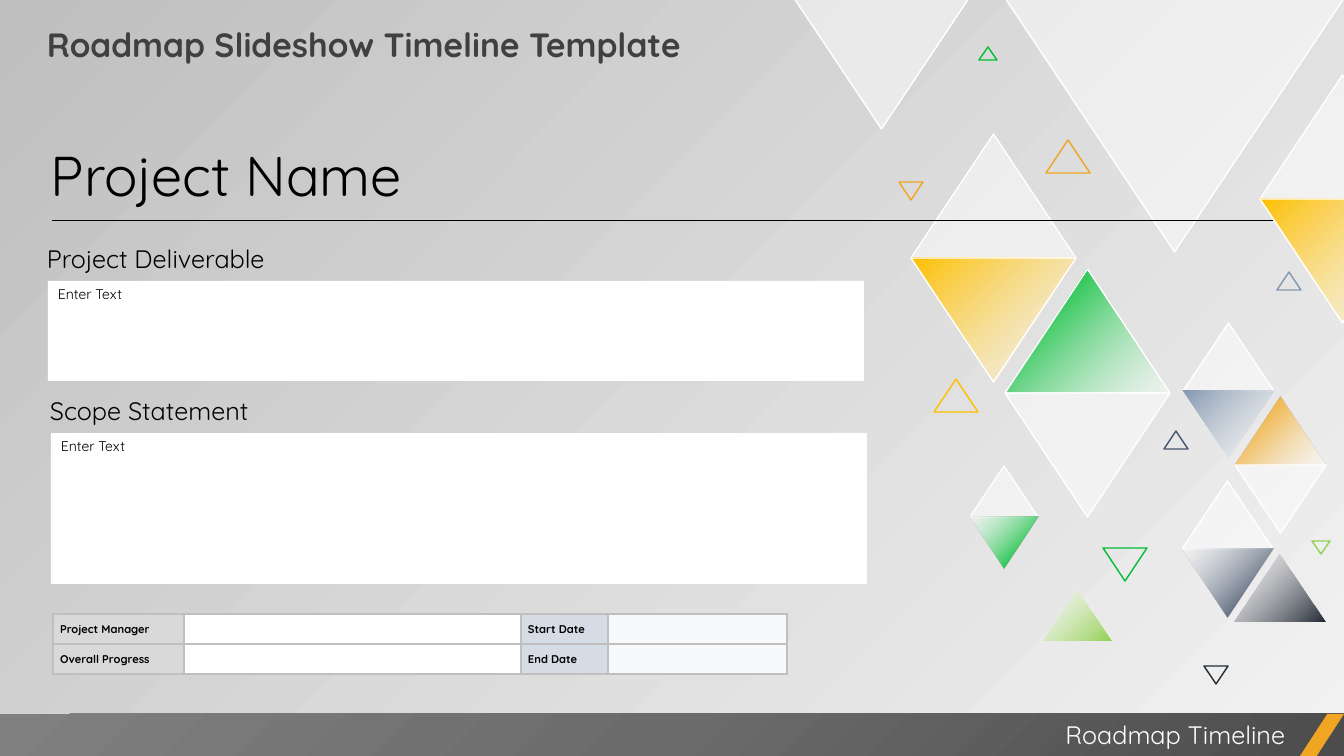
from lxml import etree
from pptx import Presentation
from pptx.dml.color import RGBColor
from pptx.enum.shapes import MSO_CONNECTOR, MSO_SHAPE
from pptx.enum.text import MSO_ANCHOR, MSO_AUTO_SIZE, PP_ALIGN
from pptx.oxml.ns import qn
from pptx.util import Emu, Pt

TRIANGLE = MSO_SHAPE.ISOSCELES_TRIANGLE
RECTANGLE = MSO_SHAPE.RECTANGLE
PARALLELOGRAM = MSO_SHAPE.PARALLELOGRAM
STRAIGHT = MSO_CONNECTOR.STRAIGHT
LEFT, RIGHT = PP_ALIGN.LEFT, PP_ALIGN.RIGHT
TOP, MIDDLE = MSO_ANCHOR.TOP, MSO_ANCHOR.MIDDLE
GROW = MSO_AUTO_SIZE.SHAPE_TO_FIT_TEXT

COLORS = {
    "white": "FFFFFF", "black": "000000", "title": "404040", "yellow": "FFC000",
    "green": "00BD32", "orange": "F0A622", "lime": "92D050", "steel": "8497B0",
    "slate": "44546A", "ink": "222A35", "mist": "F2F2F2", "silver": "BFBFBF",
    "label": "D9D9D9", "date label": "D6DCE5", "date": "F7F9FB",
    "footer dark": "4C4C4C", "footer mid": "6B6B6B", "footer light": "808080",
}
GLASS = [(0, "white", 50)]
BACKDROP = [(0, "mist", 40), (100, "silver", 100)]
FOOTER = [(0, "footer dark", 100), (50, "footer mid", 100), (100, "footer light", 100)]

LARGE, MEDIUM, SMALL = (165, 124), (91, 68), (68, 51)
MARKER_BIG, MARKER_MID, MARKER_TINY = (44, 33), (24, 18), (18, 13)


def fade_out(color):
    return [(0, color, 100), (100, "white", 50)]


def fade_in(color):
    return [(0, "white", 50), (82, color, 100)]


DIAMONDS = [
    (911, 134, LARGE, GLASS, fade_out("yellow")),
    (1005, 269, LARGE, fade_in("green"), GLASS),
    (1182, 481, MEDIUM, GLASS, fade_in("slate")),
    (1183, 323, MEDIUM, GLASS, fade_out("steel")),
    (1235, 397, MEDIUM, fade_in("orange"), GLASS),
    (970, 466, SMALL, GLASS, fade_in("green")),
    (1260, 75, LARGE, GLASS, fade_out("yellow")),
]
SINGLES = [
    (1005, -2, (339, 254), True, GLASS, "white"),
    (794, -2, (175, 131), True, GLASS, "white"),
    (1234, 554, MEDIUM, False, fade_out("ink"), None),
    (1043, 590, SMALL, False, fade_out("lime"), None),
]
MARKERS = [
    (1103, 548, MARKER_BIG, True, "green"),
    (934, 379, MARKER_BIG, False, "yellow"),
    (1046, 140, MARKER_BIG, False, "orange"),
    (1164, 431, MARKER_MID, False, "slate"),
    (1204, 666, MARKER_MID, True, "ink"),
    (899, 182, MARKER_MID, True, "orange"),
    (1277, 272, MARKER_MID, False, "steel"),
    (979, 47, MARKER_TINY, False, "green"),
    (1312, 541, MARKER_TINY, True, "lime"),
]
FACTS = [
    ["Project Manager", "", "Start Date", ""],
    ["Overall Progress", "", "End Date", ""],
]
FACT_WIDTHS = [131, 337, 87, 179]
FACT_FILLS = ["label", "white", "date label", "date"]
SECTIONS = [
    ("Project Deliverable", 37, 238, 48, 281, 100),
    ("Scope Statement", 40, 390, 51, 433, 151),
]


class Deck:
    font = {"name": "Quicksand", "bold": False}

    def __init__(self, width, height):
        self.presentation = Presentation()
        self.presentation.slide_width = self.px(width)
        self.presentation.slide_height = self.px(height)
        self.slide = self.presentation.slides.add_slide(self.presentation.slide_layouts[6])

    def px(self, length):
        return Emu(round(length * 914400 / 100.8))

    def box(self, *lengths):
        return [self.px(length) for length in lengths]

    def rgb(self, color):
        return RGBColor.from_string(COLORS[color])

    def add_color(self, parent, color, opacity):
        tint = etree.SubElement(parent, qn("a:srgbClr"), val=COLORS[color])
        if opacity < 100:
            etree.SubElement(tint, qn("a:alpha"), val=str(opacity * 1000))

    def paint(self, fill, owner, stops, radial=False):
        if len(stops) == 1:
            fill.solid()
            fill.fore_color.rgb = self.rgb(stops[0][1])
            solid = owner.find(".//" + qn("a:solidFill"))
            solid.clear()
            self.add_color(solid, *stops[0][1:])
            return
        fill.gradient()
        fill.gradient_angle = 135
        gradient = owner.find(".//" + qn("a:gradFill"))
        stop_list = gradient.find(qn("a:gsLst"))
        stop_list.clear()
        for position, color, opacity in stops:
            stop = etree.SubElement(stop_list, qn("a:gs"), pos=str(position * 1000))
            self.add_color(stop, color, opacity)
        if radial:
            gradient.remove(gradient.find(qn("a:lin")))
            circle = etree.SubElement(gradient, qn("a:path"), {"path": "circle"})
            etree.SubElement(circle, qn("a:fillToRect"), l="100000", t="100000")

    def backdrop(self, stops):
        self.paint(self.slide.background.fill, self.slide.element, stops)

    def shape(self, kind, bounds, stops=None, outline=None, flipped=False, radial=False):
        figure = self.slide.shapes.add_shape(kind, *self.box(*bounds))
        figure.shadow.inherit = False
        figure.rotation = 180 if flipped else 0
        if stops:
            self.paint(figure.fill, figure.element.spPr, stops, radial)
        else:
            figure.fill.background()
        if outline:
            figure.line.color.rgb = self.rgb(outline)
            figure.line.width = Pt(1)
        else:
            figure.line.fill.background()
        return figure

    def diamond(self, left, top, size, upper, lower):
        width, height = size
        for row, stops in enumerate((upper, lower)):
            outline = "white" if size == LARGE or stops == GLASS else None
            self.shape(TRIANGLE, (left, top + row * height, width, height), stops, outline, row == 1)

    def put_text(self, frame, text, size, color="black", align=LEFT, **changes):
        paragraph = frame.paragraphs[0]
        paragraph.alignment = align
        run = paragraph.add_run()
        run.text = text
        for name, value in {**self.font, "size": Pt(size), **changes}.items():
            setattr(run.font, name, value)
        run.font.color.rgb = self.rgb(color)

    def text(self, bounds, text, size, **style):
        frame = self.slide.shapes.add_textbox(*self.box(*bounds)).text_frame
        frame.word_wrap = True
        frame.auto_size = GROW
        self.put_text(frame, text, size, **style)

    def entry(self, bounds, text):
        frame = self.shape(RECTANGLE, bounds, [(0, "white", 100)]).text_frame
        frame.word_wrap = True
        frame.vertical_anchor = TOP
        self.put_text(frame, text, 10)

    def rule(self, *ends):
        line = self.slide.shapes.add_connector(STRAIGHT, *self.box(*ends))
        line.line.color.rgb = self.rgb("black")
        line.line.width = Pt(0.5)
        etree.SubElement(line.element.spPr, qn("a:effectLst"))

    def table(self, left, top, row_height, widths, fills, rows):
        bounds = self.box(left, top, sum(widths), row_height * len(rows))
        grid = self.slide.shapes.add_table(len(rows), len(widths), *bounds).table
        grid.first_row = grid.horz_banding = False
        for column, width in zip(grid.columns, widths):
            column.width = self.px(width)
        for row, texts in zip(grid.rows, rows):
            row.height = self.px(row_height)
            for cell, text, fill in zip(row.cells, texts, fills):
                self.cell(cell, text, fill)

    def cell(self, cell, text, fill):
        layout = {"margin_left": self.px(7), "margin_right": self.px(7),
                  "margin_top": 0, "margin_bottom": 0, "vertical_anchor": MIDDLE}
        for name, value in layout.items():
            setattr(cell, name, value)
        properties = cell._tc.get_or_add_tcPr()
        for side in "LRTB":
            border = etree.SubElement(properties, qn("a:ln" + side), w=str(int(Pt(1))))
            self.add_color(etree.SubElement(border, qn("a:solidFill")), "silver", 100)
        cell.fill.solid()
        cell.fill.fore_color.rgb = self.rgb(fill)
        paragraph = cell.text_frame.paragraphs[0]
        paragraph.line_spacing = 1.07
        if text:
            self.put_text(cell.text_frame, text, 8, bold=True)
        else:
            etree.SubElement(paragraph._p, qn("a:endParaRPr"), sz="800")


def main():
    deck = Deck(1344, 756)
    deck.backdrop(BACKDROP)
    for diamond in DIAMONDS:
        deck.diamond(*diamond)
    for left, top, size, flipped, stops, outline in SINGLES:
        deck.shape(TRIANGLE, (left, top, *size), stops, outline, flipped)
    for left, top, size, flipped, color in MARKERS:
        deck.shape(TRIANGLE, (left, top, *size), None, color, flipped)
    deck.text((37, 19, 868, 50), "Roadmap Slideshow Timeline Template", 24, color="title", bold=True)
    deck.shape(RECTANGLE, (0, 714, 1344, 42), FOOTER, radial=True)
    accent = deck.shape(PARALLELOGRAM, (1300, 714, 44, 42), [(0, "orange", 100)])
    accent.adjustments[0] = 0.65
    deck.text((529, 714, 766, 40), "Roadmap Timeline", 18, color="white", align=RIGHT)
    deck.text((41, 136, 1237, 78), "Project Name", 40)
    deck.rule(52, 220, 1273, 220)
    deck.table(53, 614, 30, FACT_WIDTHS, FACT_FILLS, FACTS)
    for heading, left, top, entry_left, entry_top, entry_height in SECTIONS:
        deck.text((left, top, 307, 40), heading, 18)
        deck.entry((entry_left, entry_top, 816, entry_height), "Enter Text")
    deck.presentation.save("out.pptx")


if __name__ == "__main__":
    main()
